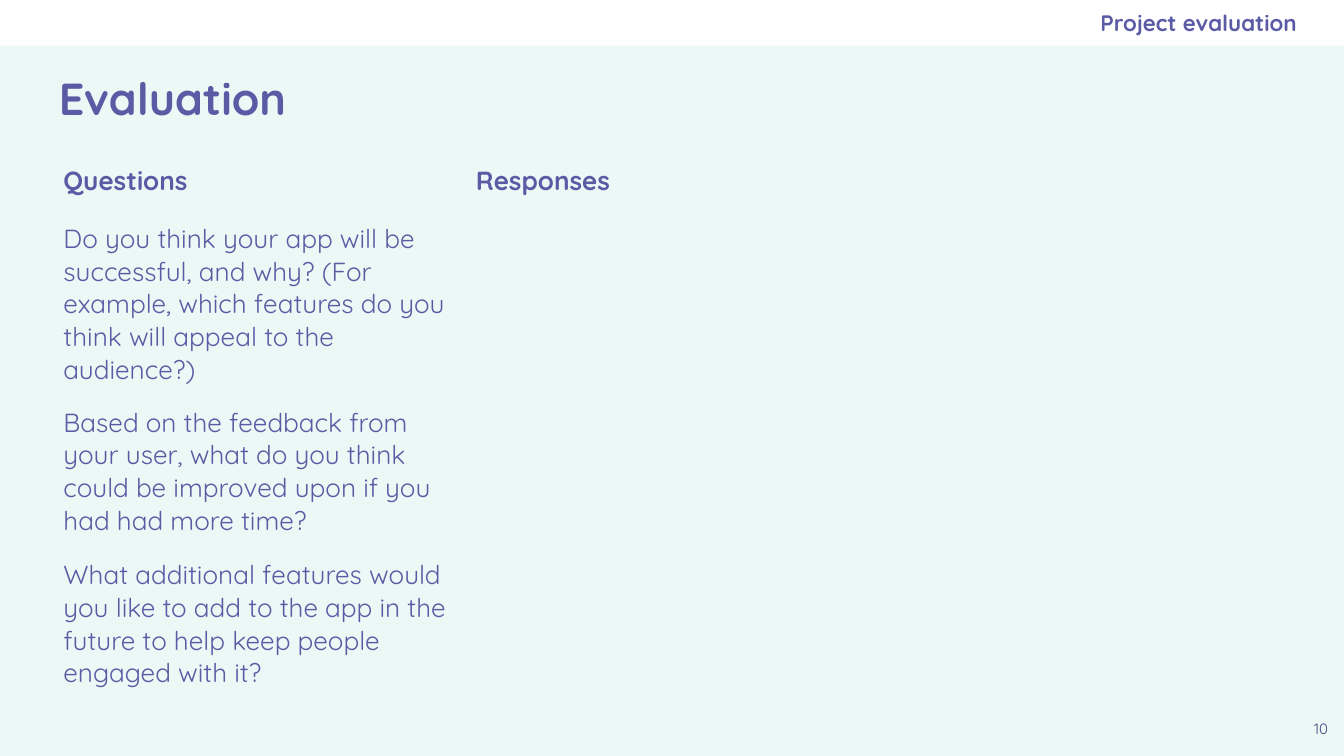
from lxml import etree
from pptx import Presentation
from pptx.dml.color import RGBColor
from pptx.enum.shapes import MSO_SHAPE
from pptx.enum.text import MSO_ANCHOR, PP_ALIGN
from pptx.oxml.ns import qn
from pptx.util import Pt

RECTANGLE = MSO_SHAPE.RECTANGLE
TOP, MIDDLE = MSO_ANCHOR.TOP, MSO_ANCHOR.MIDDLE
LEFT, CENTER, RIGHT = PP_ALIGN.LEFT, PP_ALIGN.CENTER, PP_ALIGN.RIGHT
PURPLE, DARK_PURPLE = "5B5BA5", "494985"
WIDTH, HEIGHT = 720, 405
BAR_HEIGHT = 24.5
INSET = 7.2


def color(hex_string):
    return RGBColor.from_string(hex_string)


def write(frame, text, size=14, bold=False, fill=PURPLE, align=LEFT):
    paragraph = frame.paragraphs[0]
    paragraph.alignment = align
    run = paragraph.add_run()
    run.text = text
    run.font.name = "Quicksand"
    run.font.size = Pt(size)
    run.font.bold = bold
    run.font.color.rgb = color(fill)


presentation = Presentation()
presentation.slide_width, presentation.slide_height = Pt(WIDTH), Pt(HEIGHT)
slide = presentation.slides.add_slide(presentation.slide_layouts[6])
slide.background.fill.solid()
slide.background.fill.fore_color.rgb = color("ECF8F5")

# White bar across the top
bar = slide.shapes.add_shape(RECTANGLE, 0, 0, Pt(WIDTH), Pt(BAR_HEIGHT))
bar.shadow.inherit = False
bar.fill.solid()
bar.fill.fore_color.rgb = color("FFFFFF")
bar.line.fill.background()

# Title, page number and section name
labels = [
    ("Evaluation", (24.5, 25.2, 671, 54.6), MIDDLE, INSET,
     dict(size=24, bold=True)),
    ("10", (695.5, 380.5, 24.5, 24.5), TOP, INSET,
     dict(size=8, fill=DARK_PURPLE, align=CENTER)),
    ("Project evaluation", (414, 0, 280.8, BAR_HEIGHT), MIDDLE, 0,
     dict(size=12, bold=True, align=RIGHT)),
]
for text, box, anchor, right_inset, text_format in labels:
    frame = slide.shapes.add_textbox(*map(Pt, box)).text_frame
    frame.word_wrap = True
    frame.vertical_anchor = anchor
    frame.margin_left = frame.margin_top = frame.margin_bottom = Pt(INSET)
    frame.margin_right = Pt(right_inset)
    write(frame, text, **text_format)

# Table of questions with an empty column for responses
rows = [
    ("Questions", "Responses"),
    ("Do you think your app will be successful, and why? (For example, "
     "which features do you think will appeal to the audience?)", ""),
    ("Based on the feedback from your user, what do you think could be "
     "improved upon if you had had more time?", ""),
    ("What additional features would you like to add to the app in the "
     "future to help keep people engaged with it?", ""),
]
column_widths = [221, 441.4]
row_height = 30.2
table = slide.shapes.add_table(
    len(rows), len(column_widths), Pt(26.8), Pt(80.6),
    Pt(sum(column_widths)), Pt(row_height * len(rows))).table
table.horz_banding = False
for column, width in zip(table.columns, column_widths):
    column.width = Pt(width)

for row_index, texts in enumerate(rows):
    for column_index, text in enumerate(texts):
        cell = table.cell(row_index, column_index)
        cell.margin_left = cell.margin_right = Pt(INSET)
        cell.margin_top = cell.margin_bottom = Pt(INSET)
        # Borders and fill are both invisible
        properties = cell._tc.get_or_add_tcPr()
        for side in ("a:lnL", "a:lnR", "a:lnT", "a:lnB"):
            border = etree.SubElement(properties, qn(side))
            etree.SubElement(border, qn("a:noFill"))
        cell.fill.background()
        if text:
            write(cell.text_frame, text, bold=row_index == 0)

presentation.save("out.pptx")
